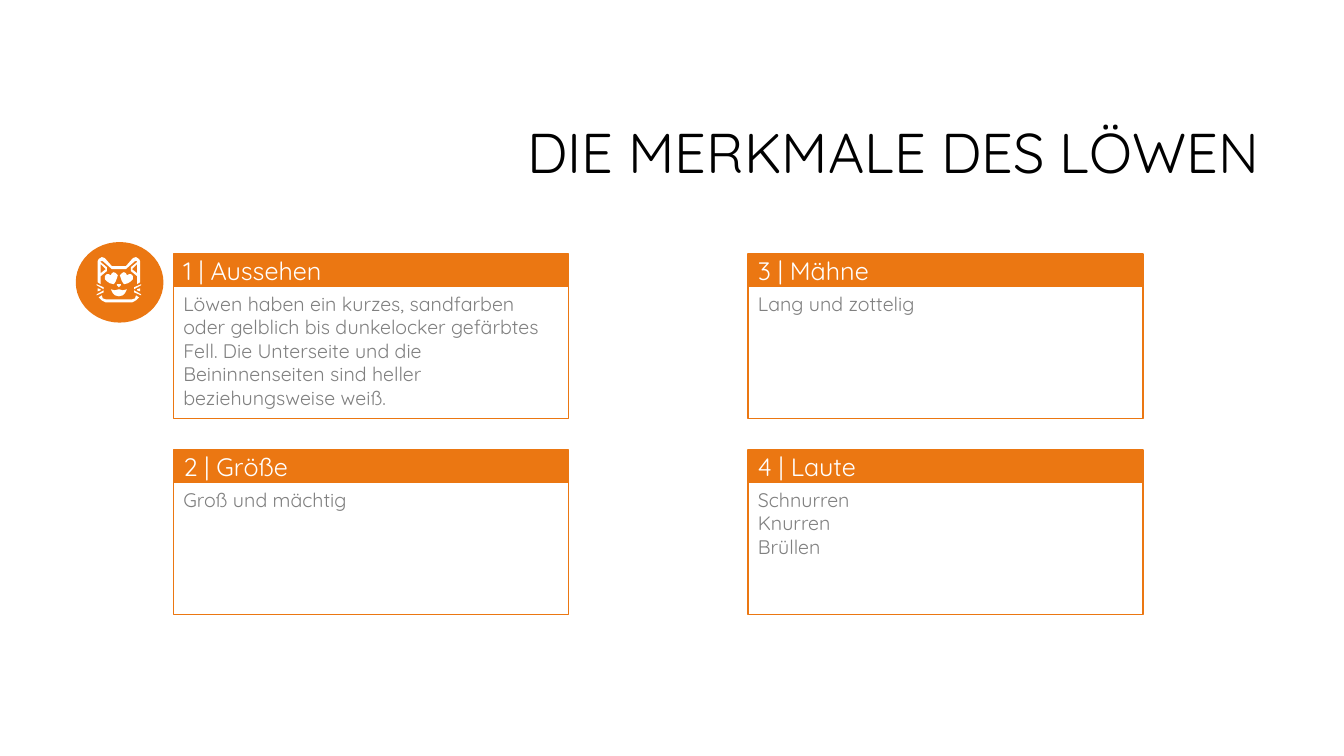
from pptx import Presentation
from pptx.dml.color import RGBColor
from pptx.enum.shapes import MSO_SHAPE
from pptx.enum.text import MSO_ANCHOR, MSO_AUTO_SIZE, PP_ALIGN
from pptx.util import Cm, Pt

ORANGE, GREY, WHITE, BLACK = "EB7712", "808080", "FFFFFF", "000000"

# Cat face in hundredths of an inch: x from the face's axis, y from the slide top.
FACE_AXIS = 118.4
FACE_UNIT = Cm(0.0254)
CENTRED_HALVES = {
    "head": [(-7, 267), (-16, 259), (-18, 259), (-18, 260), (-12, 265), (-12, 269),
             (-18, 274), (-18, 282), (-21, 280), (-21, 259), (-20, 257), (-17, 255),
             (-14, 256), (-7, 264)],
    "jaw": [(-13, 297), (-16, 296), (-17, 293), (-20, 295), (-17, 298), (-13, 300)],
    "nose": [(-2, 282), (-2, 283), (0, 285)],
    "mouth": [(0, 287), (-4, 288), (-8, 287), (-6, 291), (-4, 293), (0, 294)],
}
PAIRED_PARTS = {
    "ear": [(-18, 262), (-13, 267), (-18, 271)],
    "heart eye": [(-5, 282), (-9, 281), (-12, 279), (-14, 277), (-14, 274), (-12, 272),
                  (-10, 272), (-8, 273), (-7, 271), (-5, 270), (-3, 271), (-1, 273),
                  (-2, 276), (-3, 279)],
    "upper whisker": [(-22, 282), (-15, 285), (-15, 287), (-22, 283)],
    "middle whisker": [(-21, 286), (-18, 287), (-18, 288), (-21, 289)],
    "lower whisker": [(-22, 292), (-15, 288), (-15, 290), (-22, 293)],
}

CARD_LEFTS = (4.37, 18.85)
CARD_TOPS = (6.4, 11.34)
CARD_WIDTH, HEADER_HEIGHT, BODY_HEIGHT = 9.96, 0.82, 3.33
CARDS = [
    ("1 | Aussehen", ["Löwen haben ein kurzes, sandfarben oder gelblich bis dunkelocker "
                      "gefärbtes Fell. Die Unterseite und die Beininnenseiten sind heller "
                      "beziehungsweise weiß."]),
    ("3 | Mähne", ["Lang und zottelig"]),
    ("2 | Größe", ["Groß und mächtig"]),
    ("4 | Laute", ["Schnurren", "Knurren", "Brüllen"]),
]


def color(hex_value):
    return RGBColor.from_string(hex_value)


def mirrored(points):
    return [(-x, y) for x, y in reversed(points)]


class SlideBuilder:
    """Holds the font and the current slide."""

    font_name = "Quicksand"

    def __init__(self, slide):
        self.slide = slide

    def set_text(self, frame, lines, size, hex_value, align, anchor):
        frame.word_wrap = True
        frame.auto_size = MSO_AUTO_SIZE.NONE
        frame.vertical_anchor = anchor
        frame.text = "\n".join(lines)
        for paragraph in frame.paragraphs:
            paragraph.alignment = align
            paragraph.font.name = self.font_name
            paragraph.font.size = Pt(size)
            paragraph.font.color.rgb = color(hex_value)

    def title(self, text, left, top, width, height):
        title = self.slide.shapes.title
        title.left, title.top = Cm(left), Cm(top)
        title.width, title.height = Cm(width), Cm(height)
        self.set_text(title.text_frame, [text], 40, BLACK, PP_ALIGN.RIGHT, MSO_ANCHOR.MIDDLE)
        title.text_frame.paragraphs[0].line_spacing = 0.9

    def paint(self, shape, fill=None, line=None):
        shape.shadow.inherit = False
        if fill:
            shape.fill.solid()
            shape.fill.fore_color.rgb = color(fill)
        else:
            shape.fill.background()
        if line:
            shape.line.color.rgb = color(line)
            shape.line.width = Pt(1)
        else:
            shape.line.fill.background()

    def card(self, heading, lines, left, top):
        group = self.slide.shapes.add_group_shape()
        header = group.shapes.add_shape(MSO_SHAPE.RECTANGLE, Cm(left), Cm(top),
                                        Cm(CARD_WIDTH), Cm(HEADER_HEIGHT))
        self.paint(header, ORANGE, ORANGE)
        self.set_text(header.text_frame, [heading], 18, WHITE, PP_ALIGN.LEFT, MSO_ANCHOR.MIDDLE)
        body = group.shapes.add_shape(MSO_SHAPE.RECTANGLE, Cm(left), Cm(top + HEADER_HEIGHT),
                                      Cm(CARD_WIDTH), Cm(BODY_HEIGHT))
        self.paint(body, line=ORANGE)
        self.set_text(body.text_frame, lines, 14, GREY, PP_ALIGN.LEFT, MSO_ANCHOR.TOP)

    def cat_badge(self, left, top, width, height):
        disc = self.slide.shapes.add_shape(MSO_SHAPE.OVAL, Cm(left), Cm(top),
                                           Cm(width), Cm(height))
        self.paint(disc, ORANGE)
        outlines = [half + mirrored(half) for half in CENTRED_HALVES.values()]
        for part in PAIRED_PARTS.values():
            outlines += [part, mirrored(part)]
        builder = None
        for outline in outlines:
            points = [(FACE_AXIS + x, y) for x, y in outline]
            if builder is None:
                builder = self.slide.shapes.build_freeform(*points[0], scale=FACE_UNIT)
            else:
                builder.move_to(*points[0])
            builder.add_line_segments(points[1:], close=True)
        self.paint(builder.convert_to_shape(), WHITE)


def main():
    deck = Presentation()
    deck.slide_width, deck.slide_height = Cm(33.87), Cm(19.05)
    page = SlideBuilder(deck.slides.add_slide(deck.slide_layouts.get_by_name("Title Only")))
    page.title("DIE MERKMALE DES LÖWEN", 8.05, 2.13, 23.93, 3.58)
    page.cat_badge(1.91, 6.1, 2.21, 2.03)
    for index, (heading, lines) in enumerate(CARDS):
        row, column = divmod(index, 2)
        page.card(heading, lines, CARD_LEFTS[column], CARD_TOPS[row])
    deck.save("out.pptx")


if __name__ == "__main__":
    main()
